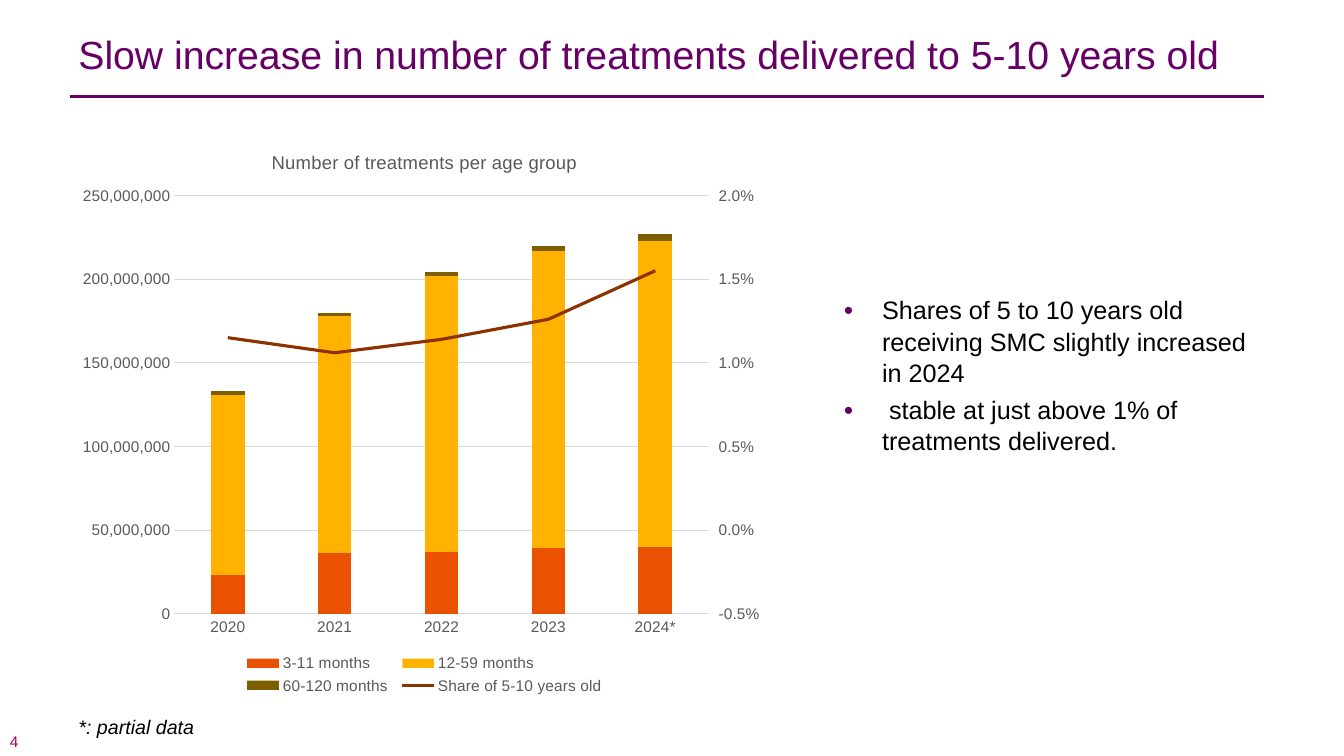
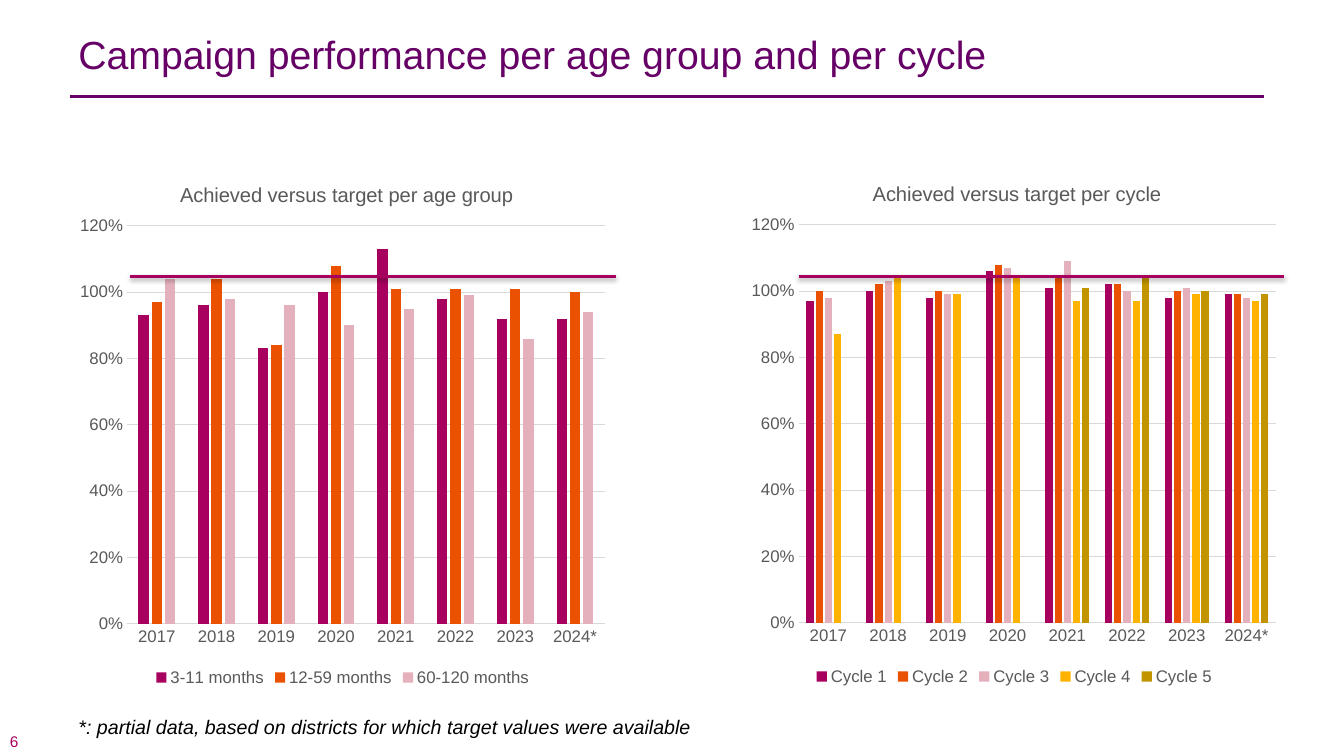
from pptx import Presentation
from pptx.chart.axis import ValueAxis
from pptx.chart.data import CategoryChartData
from pptx.dml.color import RGBColor
from pptx.enum.chart import XL_CHART_TYPE as ChartType
from pptx.enum.chart import XL_LEGEND_POSITION as LegendPosition
from pptx.enum.chart import XL_MARKER_STYLE as MarkerStyle
from pptx.enum.chart import XL_TICK_MARK as TickMark
from pptx.enum.shapes import MSO_CONNECTOR as Connector
from pptx.enum.text import MSO_ANCHOR as Anchor
from pptx.oxml import parse_xml
from pptx.oxml.ns import nsdecls, qn
from pptx.util import Pt

PX = 9144
FONT = "Arial"
PURPLE = RGBColor(0x66, 0x00, 0x66)
MAGENTA = RGBColor(0xA7, 0x00, 0x5F)
ORANGE = RGBColor(0xEA, 0x51, 0x00)
PINK = RGBColor(0xE4, 0xB0, 0xBB)
AMBER = RGBColor(0xFF, 0xB3, 0x00)
GOLD = RGBColor(0xC1, 0x94, 0x00)
OLIVE = RGBColor(0x7D, 0x5E, 0x00)
BROWN = RGBColor(0x8C, 0x31, 0x00)
BLACK = RGBColor(0x00, 0x00, 0x00)
GREY = RGBColor(0x59, 0x59, 0x59)
LIGHT_GREY = RGBColor(0xD9, 0xD9, 0xD9)

MILLION = 1_000_000
YEARS = ["2017", "2018", "2019", "2020", "2021", "2022", "2023", "2024*"]
AGE_GROUPS = ["3-11 months", "12-59 months", "60-120 months"]
SHARE_AXES = f"""
<c:axes {nsdecls("c")}>
  <c:lineChart>
    <c:grouping val="standard"/><c:varyColors val="0"/>
    <c:marker val="1"/><c:axId val="5001"/><c:axId val="5002"/>
  </c:lineChart>
  <c:catAx>
    <c:axId val="5001"/><c:scaling><c:orientation val="minMax"/></c:scaling>
    <c:delete val="1"/><c:axPos val="b"/>
    <c:crossAx val="5002"/><c:crosses val="autoZero"/>
  </c:catAx>
  <c:valAx>
    <c:axId val="5002"/><c:scaling><c:orientation val="minMax"/></c:scaling>
    <c:delete val="0"/><c:axPos val="r"/>
    <c:crossAx val="5001"/><c:crosses val="max"/>
  </c:valAx>
</c:axes>"""


def set_font(font, size, color, italic=False):
    font.name = FONT
    font.size = Pt(size)
    font.bold = False
    font.italic = italic
    font.color.rgb = color


def add_bullet(paragraph):
    properties = paragraph._p.get_or_add_pPr()
    properties.set("marL", str(38 * PX))
    properties.set("indent", str(-38 * PX))
    for bullet in (
        f'<a:buClr {nsdecls("a")}><a:srgbClr val="{PURPLE}"/></a:buClr>',
        f'<a:buSzPct {nsdecls("a")} val="65000"/>',
        f'<a:buFont {nsdecls("a")} typeface="{FONT}"/>',
        f'<a:buChar {nsdecls("a")} char="●"/>',
    ):
        properties.append(parse_xml(bullet))


def add_text(slide, frame, *paragraphs, size, color=BLACK, italic=False,
             anchor=Anchor.TOP, spacing=None, gap=0, bullets=False):
    text_frame = slide.shapes.add_textbox(*(n * PX for n in frame)).text_frame
    text_frame.word_wrap = True
    text_frame.vertical_anchor = anchor
    for index, text in enumerate(paragraphs):
        paragraph = text_frame.add_paragraph() if index else text_frame.paragraphs[0]
        paragraph.text = text
        if bullets:
            add_bullet(paragraph)
        if spacing:
            paragraph.line_spacing = spacing
        if index:
            paragraph.space_before = Pt(gap)
        set_font(paragraph.runs[0].font, size, color, italic)


def add_rule(slide, left, top, width, color, shadow=""):
    rule = slide.shapes.add_connector(
        Connector.STRAIGHT, left * PX, top * PX, (left + width) * PX, top * PX)
    rule.line.color.rgb = color
    rule.line.width = Pt(2)
    rule._element.spPr.append(
        parse_xml(f'<a:effectLst {nsdecls("a")}>{shadow}</a:effectLst>'))


def add_target_line(slide, left):
    add_rule(slide, left, 274, 482, MAGENTA,
             '<a:outerShdw blurRad="40000" dist="20000" dir="5400000" rotWithShape="0">'
             '<a:srgbClr val="000000"><a:alpha val="38000"/></a:srgbClr></a:outerShdw>')


def add_base(presentation, title, number, note):
    slide = presentation.slides.add_slide(presentation.slide_layouts[6])
    add_text(slide, (0, 726, 106, 18), number, size=11, color=MAGENTA,
             anchor=Anchor.MIDDLE)
    add_text(slide, (68, 36, 1187, 75), title, size=28, color=PURPLE, spacing=Pt(26))
    add_rule(slide, 69, 96, 1185, PURPLE)
    add_text(slide, (68, 704, 972, 34), note, size=14, italic=True)
    return slide


def place(part, index, chart_frame, left, top, width=None, height=None):
    for layout in part.findall(qn("c:layout")):
        part.remove(layout)
    chart_width, chart_height = chart_frame[2:]
    target = '<c:layoutTarget val="inner"/>' if part.tag == qn("c:plotArea") else ""
    size = ""
    if width:
        size = (f'<c:w val="{width / chart_width:.4f}"/>'
                f'<c:h val="{height / chart_height:.4f}"/>')
    part.insert(index, parse_xml(
        f'<c:layout {nsdecls("c")}><c:manualLayout>{target}'
        f'<c:xMode val="edge"/><c:yMode val="edge"/>'
        f'<c:x val="{left / chart_width:.4f}"/><c:y val="{top / chart_height:.4f}"/>'
        f'{size}</c:manualLayout></c:layout>'))


def style_axis(axis, size, number_format=None, low=None, high=None, step=None):
    axis.major_tick_mark = axis.minor_tick_mark = TickMark.NONE
    set_font(axis.tick_labels.font, size, GREY)
    if number_format is None:
        axis.format.line.color.rgb = LIGHT_GREY
        axis.format.line.width = Pt(0.75)
        return
    axis.format.line.fill.background()
    axis.tick_labels.number_format = number_format
    axis.tick_labels.number_format_is_linked = False
    axis.minimum_scale, axis.maximum_scale, axis.major_unit = low, high, step


def add_columns(slide, frame, kind, title, title_left, categories, series, plot_frame,
                size, number_format, high, step, overlap):
    data = CategoryChartData()
    data.categories = categories
    for name, values, _ in series:
        data.add_series(name, values)
    chart = slide.shapes.add_chart(kind, *(n * PX for n in frame), data).chart
    set_font(chart.font, size, BLACK)

    chart.has_title = True
    heading = chart.chart_title.text_frame
    heading.text = title
    set_font(heading.paragraphs[0].runs[0].font, size * 1.2, GREY)
    place(chart.chart_title._element, 1, frame, title_left, 21)

    chart.has_legend = True
    chart.legend.position = LegendPosition.BOTTOM
    chart.legend.include_in_layout = False
    set_font(chart.legend.font, size, GREY)

    style_axis(chart.category_axis, size)
    style_axis(chart.value_axis, size, number_format, 0, high, step)
    grid = chart.value_axis.major_gridlines.format.line
    grid.color.rgb = LIGHT_GREY
    grid.width = Pt(0.75)

    columns = chart.plots[0]
    columns.vary_by_categories = False
    columns.gap_width = 219
    columns.overlap = overlap
    for column, (_, _, color) in zip(columns.series, series):
        column.format.fill.solid()
        column.format.fill.fore_color.rgb = color
        column.invert_if_negative = False
    place(columns._element.getparent(), 0, frame, *plot_frame)
    return chart


def move_last_series_to_line(chart, size, color):
    columns = chart.plots[0]._element
    share = columns.findall(qn("c:ser"))[-1]
    for tag in ("c:invertIfNegative", "c:spPr"):
        share.remove(share.find(qn(tag)))
    line_plot, category_axis, share_axis = parse_xml(SHARE_AXES)
    line_plot.insert(2, share)
    columns.addnext(line_plot)
    chart.value_axis._element.addnext(category_axis)
    category_axis.addnext(share_axis)
    style_axis(ValueAxis(share_axis), size, "0.0%", -0.005, 0.02, 0.005)
    ValueAxis(share_axis).major_tick_mark = TickMark.OUTSIDE

    line = chart.plots[1].series[0]
    line.smooth = False
    line.marker.style = MarkerStyle.NONE
    line.format.line.color.rgb = color
    line.format.line.width = Pt(2.25)


def add_treatments_slide(presentation):
    slide = add_base(
        presentation, "Slow increase in number of treatments delivered to 5-10 years old",
        "4", "*: partial data")
    add_text(slide, (827, 286, 427, 368),
             "Shares of 5 to 10 years old receiving SMC slightly increased in 2024",
             " stable at just above 1% of treatments delivered.",
             size=18, spacing=1.04, gap=4, bullets=True)
    millions = [(23, 36, 37, 39, 40), (108, 142, 165, 178, 183), (2, 2, 2, 3, 4)]
    series = [(name, [n * MILLION for n in values], color) for name, values, color
              in zip(AGE_GROUPS, millions, (ORANGE, AMBER, OLIVE))]
    series.append(("Share of 5-10 years old",
                   (0.0115, 0.0106, 0.0114, 0.0126, 0.0155), BROWN))
    frame = (68, 125, 700, 572)
    chart = add_columns(
        slide, frame, ChartType.COLUMN_STACKED, "Number of treatments per age group", 198,
        YEARS[3:], series, (105, 69, 530, 415), size=11, number_format="#,##0",
        high=250 * MILLION, step=50 * MILLION, overlap=100)
    move_last_series_to_line(chart, 11, BROWN)
    place(chart.legend._element, 1, frame, 168, 520, 370, 48)


def add_performance_slide(presentation):
    slide = add_base(
        presentation, "Campaign performance per age group and per cycle", "6",
        "*: partial data, based on districts for which target values were available")
    by_age = zip(AGE_GROUPS, [
        (0.93, 0.96, 0.83, 1, 1.13, 0.98, 0.92, 0.92),
        (0.97, 1.04, 0.84, 1.08, 1.01, 1.01, 1.01, 1),
        (1.04, 0.98, 0.96, 0.9, 0.95, 0.99, 0.86, 0.94),
    ], (MAGENTA, ORANGE, PINK))
    by_cycle = zip([f"Cycle {n}" for n in range(1, 6)], [
        (0.97, 1, 0.98, 1.06, 1.01, 1.02, 0.98, 0.99),
        (1, 1.02, 1, 1.08, 1.05, 1.02, 1, 0.99),
        (0.98, 1.03, 0.99, 1.07, 1.09, 1, 1.01, 0.98),
        (0.87, 1.04, 0.99, 1.04, 0.97, 0.97, 0.99, 0.97),
        (None, None, None, None, 1.01, 1.04, 1, 0.99),
    ], (MAGENTA, ORANGE, PINK, AMBER, GOLD))
    for left, top, target_left, title_left, subject, series in (
        (68, 156, 129, 107, "age group", by_age),
        (734, 155, 792, 128, "cycle", by_cycle),
    ):
        add_columns(
            slide, (left, top, 544, 529), ChartType.COLUMN_CLUSTERED,
            f"Achieved versus target per {subject}", title_left, YEARS, list(series),
            (58, 68, 474, 395), size=12, number_format="0%", high=1.2, step=0.2,
            overlap=-27)
        add_target_line(slide, target_left)


def main():
    presentation = Presentation()
    presentation.slide_width = 1333 * PX
    presentation.slide_height = 750 * PX
    add_treatments_slide(presentation)
    add_performance_slide(presentation)
    presentation.save("out.pptx")


if __name__ == "__main__":
    main()
